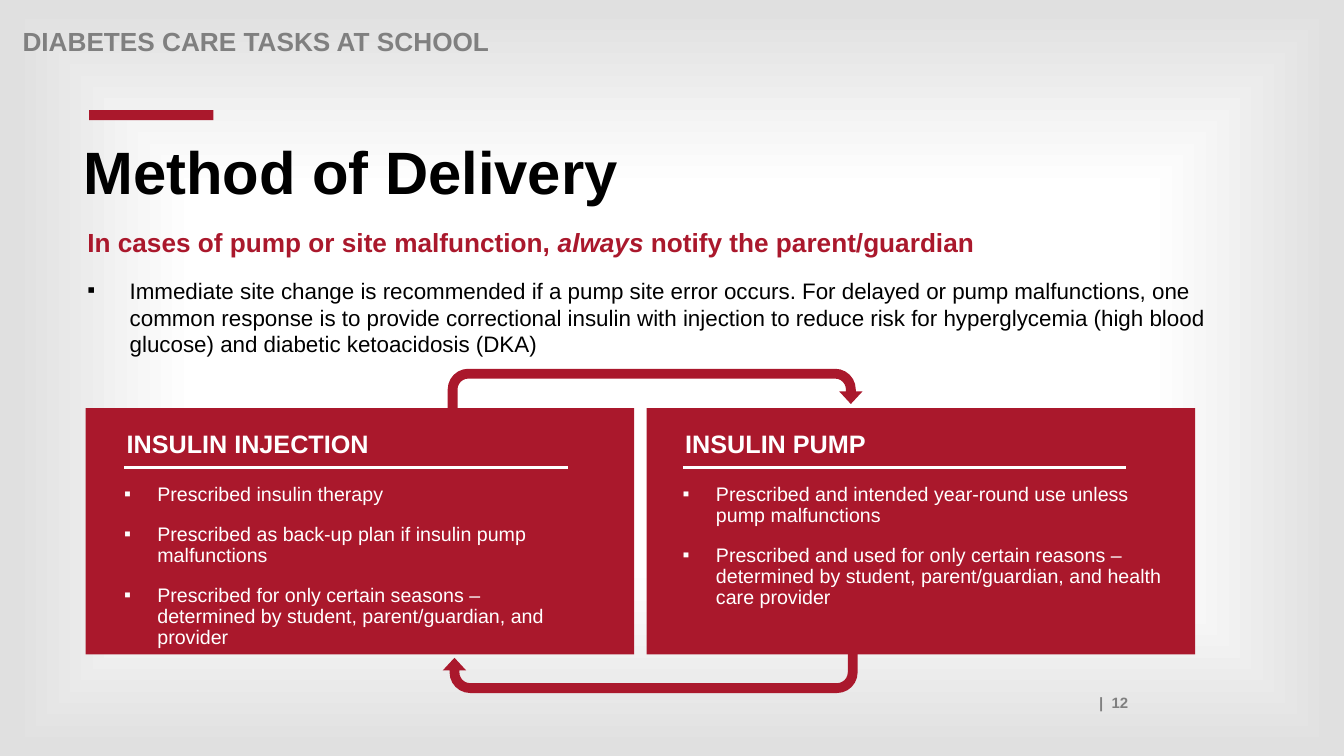
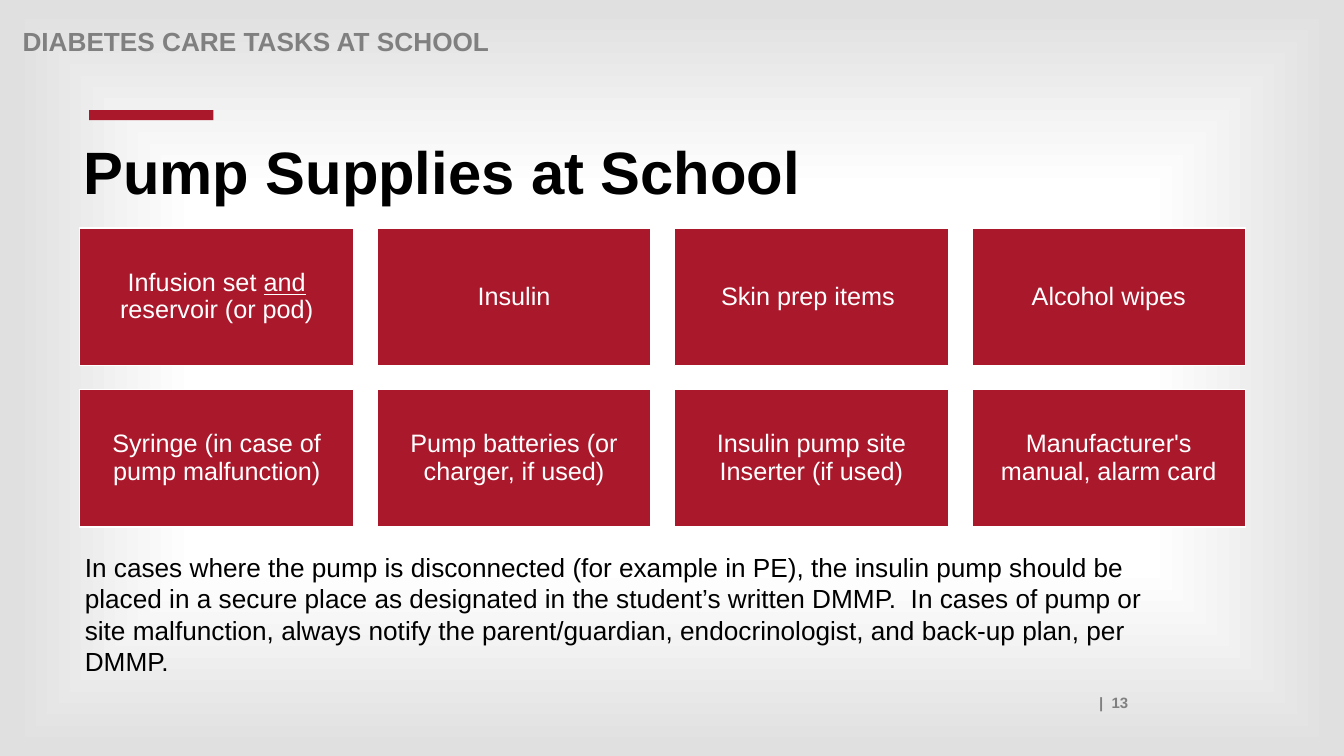
from pptx import Presentation
from pptx.dml.color import RGBColor
from pptx.enum.shapes import MSO_CONNECTOR, MSO_SHAPE
from pptx.enum.text import MSO_ANCHOR, PP_ALIGN
from pptx.oxml import parse_xml
from pptx.oxml.ns import nsdecls, qn
from pptx.util import Emu, Inches, Pt

RECTANGLE, U_TURN = MSO_SHAPE.RECTANGLE, MSO_SHAPE.U_TURN_ARROW
STRAIGHT = MSO_CONNECTOR.STRAIGHT
TOP, MIDDLE = MSO_ANCHOR.TOP, MSO_ANCHOR.MIDDLE
LEFT, CENTER, RIGHT = PP_ALIGN.LEFT, PP_ALIGN.CENTER, PP_ALIGN.RIGHT

COLUMNS, ROWS = 160, 90
RED, WHITE, BLACK, GRAY, EDGE = "AA182C", "FFFFFF", "000000", "808080", "E0E0E0"

FONTS = {
    "header": {"size": Pt(18.7), "bold": True, "color": GRAY},
    "number": {"size": Pt(10.7), "bold": True, "color": GRAY},
    "title": {"size": Pt(42.7), "bold": True, "color": BLACK},
    "lead": {"size": Pt(18.7), "bold": True, "color": RED},
    "body": {"size": Pt(16), "color": BLACK},
    "note": {"size": Pt(18.7), "color": BLACK},
    "heading": {"size": Pt(18), "bold": True, "color": WHITE},
    "item": {"size": Pt(14), "color": WHITE},
    "tile": {"size": Pt(18), "color": WHITE},
}
PARAGRAPHS = {
    "plain": {"space_before": Pt(13.3)},
    "tight": {"space_before": Pt(13.3), "line_spacing": 0.9},
    "number": {"alignment": RIGHT},
    "tile": {"alignment": CENTER, "line_spacing": 0.9},
}


def rgb(value):
    return RGBColor.from_string(value)


def apply(target, values):
    for name, value in values.items():
        setattr(target, name, value)


class Deck:
    """Holds the style, the presentation and the page being built."""

    def __init__(self):
        self.deck = Presentation()
        self.deck.slide_width, self.deck.slide_height = Emu(12192000), Emu(6858000)
        self.page = None

    def place(self, *lengths):
        """Turn alternating columns and rows into slide lengths."""
        units = (self.deck.slide_width / COLUMNS, self.deck.slide_height / ROWS)
        return [Emu(round(length * units[i % 2])) for i, length in enumerate(lengths)]

    def add_page(self, title, number):
        self.page = self.deck.slides.add_slide(self.deck.slide_layouts[6])
        self.shade_background()
        self.text((14.5, 82, 121, 3.4), [(f"|  {number}", "number", "number", None)])
        self.text((1.5, 2.9, 132, 3.4),
                  [("DIABETES CARE TASKS AT SCHOOL", "header", "tight", None)])
        self.shape(RECTANGLE, (10.6, 13.1, 14.8, 1.2))
        self.text((8.75, 16.4, 132.4, 11.4), [(title, "title", "tight", None)])

    def shade_background(self):
        """Fade from a white centre to gray edges."""
        self.page.background.fill.gradient()
        gradient = self.page.element.find(".//" + qn("a:gradFill"))
        stops = "".join(
            f'<a:gs pos="{share * 1000}"><a:srgbClr val="{color}"/></a:gs>'
            for share, color in ((12, WHITE), (50, WHITE), (98, EDGE)))
        gradient.getparent().replace(gradient, parse_xml(
            f'<a:gradFill {nsdecls("a")} rotWithShape="1"><a:gsLst>{stops}</a:gsLst>'
            '<a:path path="shape">'
            '<a:fillToRect l="50000" t="50000" r="50000" b="50000"/>'
            "</a:path></a:gradFill>"))

    def shape(self, kind, box, line=None, adjustments=(), rotation=0):
        shape = self.page.shapes.add_shape(kind, *self.place(*box))
        shape.shadow.inherit = False
        shape.rotation = rotation
        shape.fill.solid()
        shape.fill.fore_color.rgb = rgb(RED)
        if line:
            shape.line.color.rgb = rgb(line)
            shape.line.width = Pt(1)
        else:
            shape.line.fill.background()
        for index, value in enumerate(adjustments):
            shape.adjustments[index] = value
        return shape

    def rule(self, left, top, width):
        begin_end = self.place(left, top, left + width, top)
        line = self.page.shapes.add_connector(STRAIGHT, *begin_end)
        line.line.color.rgb = rgb(WHITE)
        line.line.width = Pt(2)
        properties = line.element.spPr
        properties.append(parse_xml(f'<a:effectLst {nsdecls("a")}/>'))

    def text(self, box, paragraphs, inset=None):
        frame = self.page.shapes.add_textbox(*self.place(*box)).text_frame
        self.fill_frame(frame, paragraphs, TOP, inset)

    def tile(self, box, content):
        frame = self.shape(RECTANGLE, box, line=WHITE).text_frame
        self.fill_frame(frame, [(content, "tile", "tile", None)], MIDDLE, 0.07)

    def fill_frame(self, frame, paragraphs, anchor, inset):
        """Fill a frame from (content, font, paragraph style, bullet indent) rows."""
        apply(frame, {"word_wrap": True, "vertical_anchor": anchor})
        if inset is not None:
            apply(frame, {f"margin_{side}": Inches(inset)
                          for side in ("left", "top", "right", "bottom")})
        for index, (content, font, style, indent) in enumerate(paragraphs):
            para = frame.add_paragraph() if index else frame.paragraphs[0]
            apply(para, {"alignment": LEFT, **PARAGRAPHS[style]})
            if indent:
                self.bullet(para, indent)
            spans = [(content, {})] if isinstance(content, str) else content
            for words, changes in spans:
                span = para.add_run()
                span.text = words
                values = {"name": "Arial", **FONTS[font], **changes}
                span.font.color.rgb = rgb(values.pop("color"))
                apply(span.font, values)

    def bullet(self, para, indent):
        properties = para._p.get_or_add_pPr()
        properties.set("marL", str(Inches(indent)))
        properties.set("indent", str(-Inches(indent)))
        properties.append(parse_xml(f'<a:buFont {nsdecls("a")} typeface="Arial"/>'))
        properties.append(parse_xml(f'<a:buChar {nsdecls("a")} char="▪"/>'))


def add_delivery_page(deck):
    deck.add_page("Method of Delivery", 12)
    lead = [("In cases of pump or site malfunction, ", {}),
            ("always", {"italic": True}),
            (" notify the parent/guardian", {})]
    advice = ("Immediate site change is recommended if a pump site error occurs. "
              "For delayed or pump malfunctions, one common response is to provide "
              "correctional insulin with injection to reduce risk for hyperglycemia "
              "(high blood glucose) and diabetic ketoacidosis (DKA)")
    deck.text((10.4, 27, 137.6, 21.6),
              [(lead, "lead", "plain", None), (advice, "body", "plain", 0.42)], inset=0)

    cards = [
        ("INSULIN INJECTION", 57.1, [
            "Prescribed insulin therapy",
            "Prescribed as back-up plan if insulin pump malfunctions",
            "Prescribed for only certain seasons – determined by student, "
            "parent/guardian, and provider"]),
        ("INSULIN PUMP", 59.8, [
            "Prescribed and intended year-round use unless pump malfunctions",
            "Prescribed and used for only certain reasons – determined by student, "
            "parent/guardian, and health care provider"]),
    ]
    card_step, content_step = 66.8, 66.5
    for index, (heading, list_width, items) in enumerate(cards):
        shift = index * content_step
        deck.shape(RECTANGLE, (10.2 + index * card_step, 48.6, 65.3, 29.3))
        deck.text((13.9 + shift, 50.75, 50.2, 4.9), [(heading, "heading", "tight", None)])
        deck.text((13.6 + shift, 57.1, list_width, 11),
                  [(item, "item", "tight", 0.33) for item in items])
        deck.rule(14.8 + shift, 55.7, 52.8)

    for left, top, rotation in ((53.3, 43.9, 0), (52.7, 76.9, 180)):
        deck.shape(U_TURN, (left, top, 49.4, 5.6), rotation=rotation,
                   adjustments=(0.21, 0.25, 0.27, 0.44, 0.75))


def add_supplies_page(deck):
    deck.add_page("Pump Supplies at School", 13)
    note = ("In cases where the pump is disconnected (for example in PE), the insulin "
            "pump should be placed in a secure place as designated in the student’s "
            "written DMMP.  In cases of pump or site malfunction, always notify the "
            "parent/guardian, endocrinologist, and back-up plan, per DMMP.")
    deck.text((10.1, 65.6, 131, 13.7), [(note, "note", "plain", None)], inset=0)

    supplies = [
        [("Infusion set ", {}), ("and ", {"underline": True}), ("reservoir (or pod)", {})],
        "Insulin",
        "Skin prep items ",
        "Alcohol wipes",
        "Syringe (in case of pump malfunction)",
        "Pump batteries (or charger, if used)",
        "Insulin pump site Inserter (if used)",
        "Manufacturer's manual, alarm card",
    ]
    for index, supply in enumerate(supplies):
        row, column = divmod(index, 4)
        deck.tile((9.5 + column * 35.4, 27.15 + row * 19.2, 32.6, 16.4), supply)


def main():
    deck = Deck()
    add_delivery_page(deck)
    add_supplies_page(deck)
    deck.deck.save("out.pptx")


if __name__ == "__main__":
    main()
